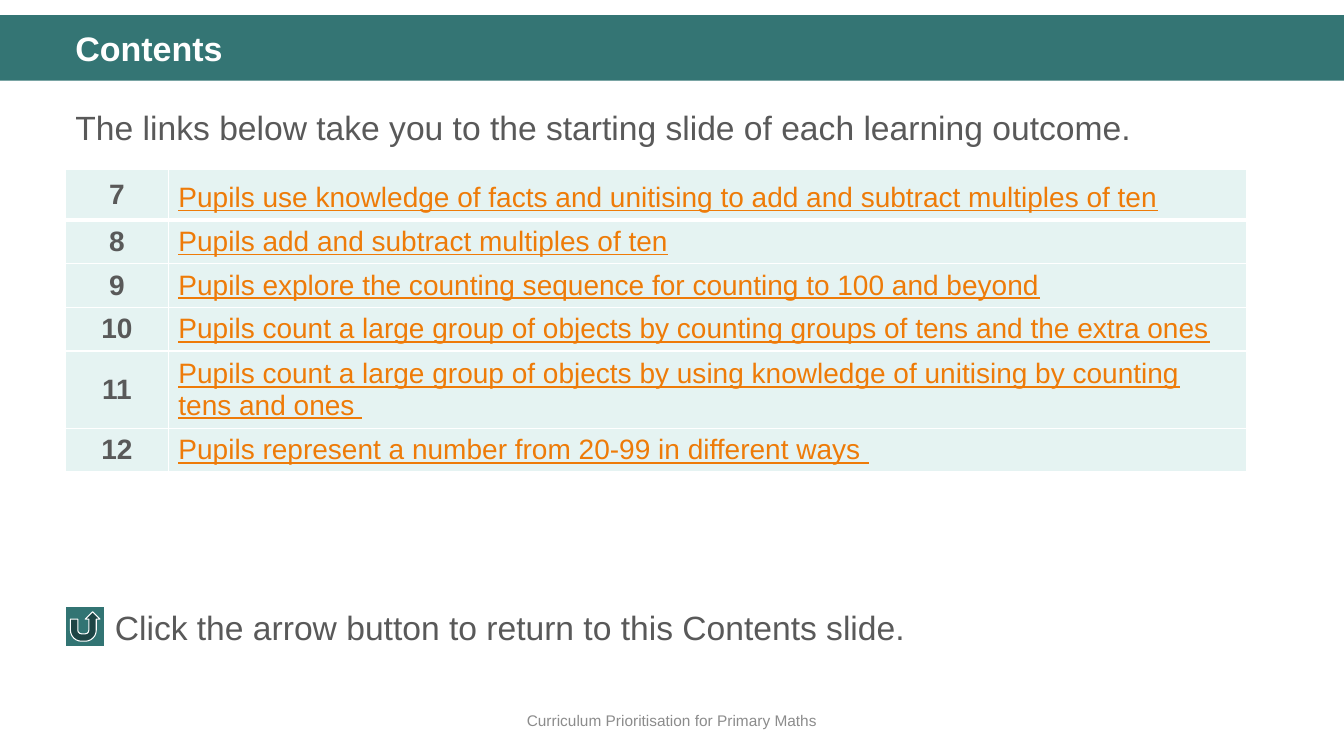
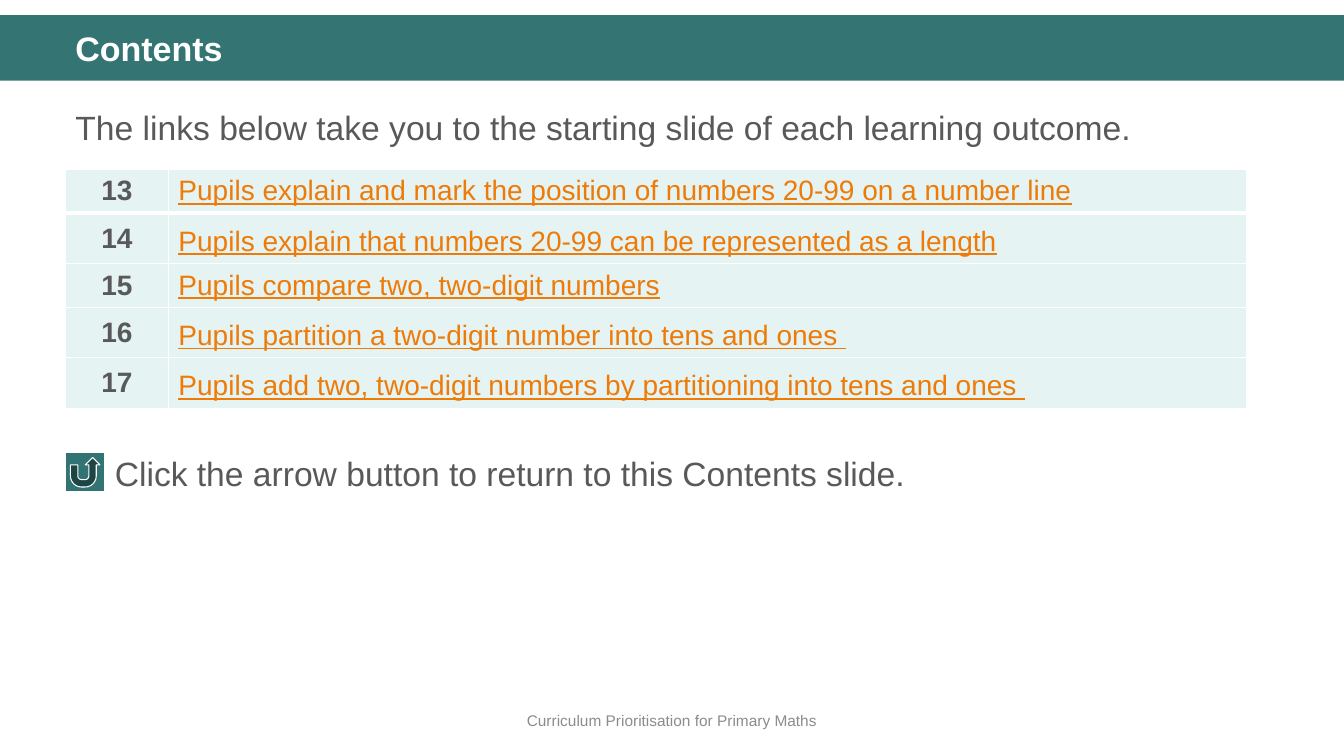
from lxml.etree import SubElement
from pptx import Presentation
from pptx.dml.color import RGBColor
from pptx.enum.shapes import MSO_SHAPE
from pptx.enum.text import MSO_ANCHOR, PP_ALIGN
from pptx.oxml.ns import qn
from pptx.util import Emu, Pt

WIDE, HIGH = 1333, 750
LEFT = 65
FONT = "Arial"
WHITE, BAND, BUTTON = "FFFFFF", "347574", "327473"
TEXT, LINK, FOOT, CELL = "595959", "EE7B08", "8C8C8C", "E5F3F2"
COLS = 102, 1069
ROW = 41

FIRST = [
    ("7", "Pupils use knowledge of facts and unitising to add and subtract multiples of ten", 1.2),
    ("8", "Pupils add and subtract multiples of ten", 1),
    ("9", "Pupils explore the counting sequence for counting to 100 and beyond", 1),
    ("10", "Pupils count a large group of objects by counting groups of tens and the extra ones", 1),
    ("11", "Pupils count a large group of objects by using knowledge of unitising by counting tens and ones ", 1),
    ("12", "Pupils represent a number from 20-99 in different ways ", 1),
]
SECOND = [
    ("13", "Pupils explain and mark the position of numbers 20-99 on a number line", 1),
    ("14", "Pupils explain that numbers 20-99 can be represented as a length", 1.2),
    ("15", "Pupils compare two, two-digit numbers", 1),
    ("16", "Pupils partition a two-digit number into tens and ones ", 1.2),
    ("17", "Pupils add two, two-digit numbers by partitioning into tens and ones ", 1.2),
]


def px(num):
    return Emu(num * 9144)


def rgb(code):
    return RGBColor.from_string(code)


def write(frame, text, size, color, bold=False, line=False, align=PP_ALIGN.LEFT, space=1, before=0):
    frame.text = text
    para = frame.paragraphs[0]
    para.alignment = align
    para.line_spacing = space
    para.space_before = Pt(before)
    font = para.runs[0].font
    font.name, font.size = FONT, Pt(size)
    font.bold, font.underline = bold, line
    font.color.rgb = rgb(color)


def add_text(slide, box, text, size, color, anchor=MSO_ANCHOR.TOP, **style):
    frame = slide.shapes.add_textbox(*map(px, box)).text_frame
    frame.word_wrap = True
    frame.vertical_anchor = anchor
    write(frame, text, size, color, **style)


def add_block(slide, kind, box, color, edge=None):
    shape = slide.shapes.add_shape(kind, *map(px, box))
    shape.shadow.inherit = False
    shape.fill.solid()
    shape.fill.fore_color.rgb = rgb(color)
    if edge:
        shape.line.color.rgb = rgb(edge)
        shape.line.width = Pt(0.75)
    else:
        shape.line.fill.background()


def add_edges(cell, top, base):
    props = cell._tc.get_or_add_tcPr()
    for side, width in zip("LRTB", (1, 1, top, base)):
        line = SubElement(props, qn(f"a:ln{side}"), w=str(Pt(width)))
        fill = SubElement(line, qn("a:solidFill"))
        SubElement(fill, qn("a:srgbClr"), val=WHITE)


def add_links(slide, items):
    box = LEFT, 168, sum(COLS), ROW * len(items)
    table = slide.shapes.add_table(len(items), 2, *map(px, box)).table
    table.first_row = table.horz_banding = False
    for col, width in zip(table.columns, COLS):
        col.width = px(width)
    for row, (num, text, space) in enumerate(items):
        table.rows[row].height = px(ROW)
        left, right = table.cell(row, 0), table.cell(row, 1)
        for cell in (left, right):
            add_edges(cell, 3 if row == 1 else 1, 3 if row == 0 else 1)
            cell.fill.solid()
            cell.fill.fore_color.rgb = rgb(CELL)
            cell.vertical_anchor = MSO_ANCHOR.MIDDLE
        write(left.text_frame, num, 20, TEXT, bold=True, align=PP_ALIGN.CENTER)
        write(right.text_frame, text, 20, LINK, line=True, space=space)


def add_hint(slide, top):
    add_block(slide, MSO_SHAPE.ACTION_BUTTON_RETURN, (LEFT, top, 39, 39), BUTTON, WHITE)
    add_text(slide, (LEFT + 39, top - 5, 1132, 50),
             "Click the arrow button to return to this Contents slide.", 24, TEXT)


def add_page(deck, items, top):
    slide = deck.slides.add_slide(deck.slide_layouts[6])
    add_block(slide, MSO_SHAPE.RECTANGLE, (0, 15, WIDE, 65), BAND)
    add_text(slide, (0, 695, WIDE, 40), "Curriculum Prioritisation for Primary Maths",
             11, FOOT, MSO_ANCHOR.MIDDLE, align=PP_ALIGN.CENTER)
    add_text(slide, (LEFT, 93, 1218, 351),
             "The links below take you to the starting slide of each learning outcome.",
             24, TEXT, space=1.2, before=10)
    add_links(slide, items)
    add_hint(slide, top)
    add_text(slide, (LEFT, 27, 1218, 47), "Contents", 24.3, WHITE, bold=True, space=0.9)


def main():
    deck = Presentation()
    deck.slide_width, deck.slide_height = px(WIDE), px(HIGH)
    add_page(deck, FIRST, 602)
    add_page(deck, SECOND, 449)
    deck.save("out.pptx")


if __name__ == "__main__":
    main()
